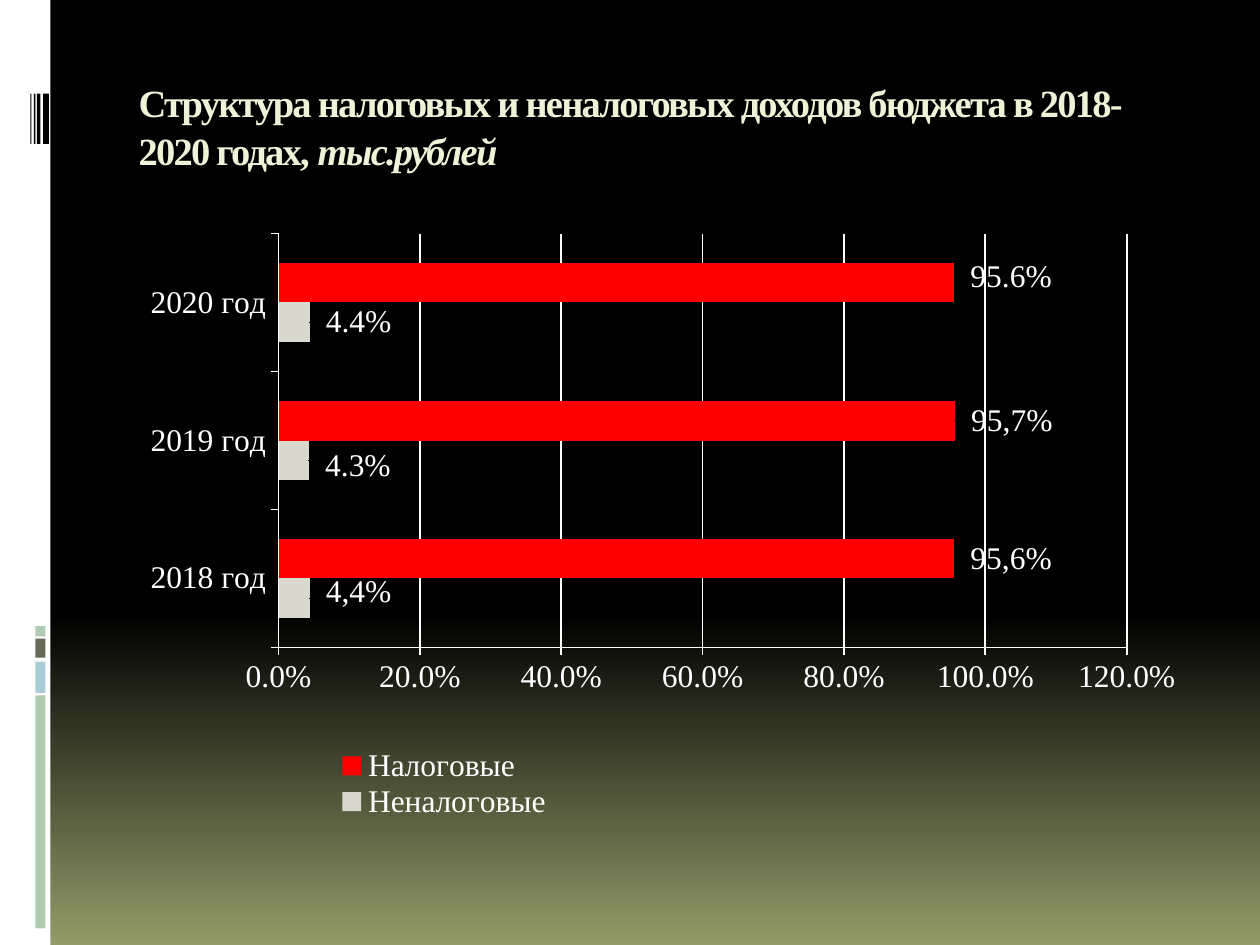
import pptx
import pptx.util
import pptx.chart.data
import pptx.dml.color
import pptx.enum.chart
import pptx.enum.shapes
import pptx.enum.text
import pptx.oxml
import pptx.oxml.ns

Pt = pptx.util.Pt
COLORS = {
    "white": "FFFFFF", "black": "000000", "olive": "939B69", "green": "B0CCB0",
    "blue": "A8CDD7", "moss": "676A55", "title": "F0F2D7", "red": "FF0000", "grey": "D9D8CF",
}
RGB = {k: pptx.dml.color.RGBColor.from_string(v) for k, v in COLORS.items()}


def set_font(font, color, **values):
    font.color.rgb = RGB[color]
    for key, value in values.items():
        setattr(font, key, value)


def make_layout(*items):
    body = "".join(f'<c:{key} val="{value}"/>' for key, value in items)
    return pptx.oxml.parse_xml(
        f'<c:layout {pptx.oxml.ns.nsdecls("c")}><c:manualLayout>{body}</c:manualLayout></c:layout>')


prs = pptx.Presentation()
prs.slide_width, prs.slide_height = Pt(720), Pt(540)
s = prs.slides.add_slide(prs.slide_layouts[5])

fill = s.background.fill
fill.gradient()
fill.gradient_angle = 270
for stop, color, position in zip(fill.gradient_stops, ("black", "olive"), (0.65, 1)):
    stop.color.rgb = RGB[color]
    stop.position = position

bars = [
    (0, 0, 28.8, 540, "white"),
    (20.2, 397.4, 5.8, 133.2, "green"),
    (20.2, 378, 5.8, 18, "blue"),
    (20.2, 365, 5.8, 10.8, "moss"),
    (20.2, 357.8, 5.8, 5.8, "green"),
]
bars += [(x, 53.5, w, 28.8, "black") for x, w in ((24.6, 3.4), (21.1, 2), (19.4, 0.9), (17.4, 0.6))]
for *box, color in bars:
    sp = s.shapes.add_shape(pptx.enum.shapes.MSO_SHAPE.RECTANGLE, *map(Pt, box))
    sp.shadow.inherit = False
    sp.fill.solid()
    sp.fill.fore_color.rgb = RGB[color]
    sp.line.fill.background()

title = s.shapes.title
title.left, title.top, title.width, title.height = Pt(72), Pt(40.3), Pt(612), Pt(72)
tf = title.text_frame
tf.word_wrap = True
tf.auto_size = pptx.enum.text.MSO_AUTO_SIZE.NONE
tf.vertical_anchor = pptx.enum.text.MSO_ANCHOR.TOP
p = tf.paragraphs[0]
p.alignment = pptx.enum.text.PP_ALIGN.LEFT
p.line_spacing = 1.04
for text, italic in (
    ("Структура налоговых и неналоговых доходов бюджета в 2018-2020 годах, ", False),
    ("тыс.рублей", True),
):
    r = p.add_run()
    r.text = text
    set_font(r.font, "title", name="Times New Roman", size=Pt(22), bold=True, italic=italic)
    r._r.get_or_add_rPr().set("spc", "-100")

data = pptx.chart.data.CategoryChartData(number_format="0.0%")
data.categories = [" 2018 год", " 2019 год", " 2020 год"]
data.add_series("Неналоговые", (0.044, 0.043, 0.044))
data.add_series("Налоговые", (0.956, 0.957, 0.956))
chart = s.shapes.add_chart(
    pptx.enum.chart.XL_CHART_TYPE.BAR_CLUSTERED, Pt(36.7), Pt(122.4), Pt(648), Pt(346.3), data).chart
chart.has_title = False
CHART_FONT = {"name": "Times New Roman", "size": Pt(18)}
set_font(chart.font, "white", name="Calibri", size=Pt(18))

plot = chart.plots[0]
plot.vary_by_categories = False
plot.gap_width = 150
plot.overlap = 0

area = chart._chartSpace.xpath("c:chart/c:plotArea")[0]
for old in area.xpath("c:layout"):
    area.remove(old)
area.insert(0, make_layout(
    ("layoutTarget", "inner"), ("xMode", "edge"), ("yMode", "edge"),
    ("x", 0.189), ("y", 0.032), ("w", 0.748), ("h", 0.683)))

value_axis, category_axis = chart.value_axis, chart.category_axis
for axis in (value_axis, category_axis):
    set_font(axis.tick_labels.font, "white", **CHART_FONT)
    axis.format.line.color.rgb = RGB["white"]
    axis.format.line.width = Pt(1)
value_axis.minimum_scale, value_axis.maximum_scale, value_axis.major_unit = 0, 1.2, 0.2
value_axis.tick_labels.number_format = "0.0%"
value_axis.tick_labels.number_format_is_linked = False
value_axis.has_major_gridlines = True
value_axis.major_gridlines.format.line.color.rgb = RGB["white"]
value_axis.major_gridlines.format.line.width = Pt(1)

chart.has_legend = True
legend = chart.legend
legend.position = pptx.enum.chart.XL_LEGEND_POSITION.RIGHT
legend.include_in_layout = False
set_font(legend.font, "white", **CHART_FONT)
legend._element.xpath("c:overlay")[0].addprevious(make_layout(
    ("xMode", "edge"), ("yMode", "edge"), ("x", 0.225), ("y", 0.88), ("w", 0.22), ("h", 0.12)))

labels = {
    "Неналоговые": ("grey", [("4,4%", 0.01, -0.01), (None, 0.01, 0.01), (None, 0.01, 0)]),
    "Налоговые": ("red", [("95,6%", 0.01, 0), ("95,7%", 0.01, 0), (None, 0.01, -0.01)]),
}
for series in plot.series:
    color, points = labels[series.name]
    series.format.fill.solid()
    series.format.fill.fore_color.rgb = RGB[color]
    series.invert_if_negative = False
    for i, (text, dx, dy) in enumerate(points):
        label = series.points[i].data_label
        label.position = pptx.enum.chart.XL_LABEL_POSITION.OUTSIDE_END
        if text:
            r = label.text_frame.paragraphs[0].add_run()
            r.text = text
            set_font(r.font, "white", **CHART_FONT)
        else:
            set_font(label.font, "white", **CHART_FONT)
        idx = series._element.xpath(f'c:dLbls/c:dLbl/c:idx[@val="{i}"]')[0]
        idx.addnext(make_layout(("x", dx), ("y", dy)))

prs.save("out.pptx")
